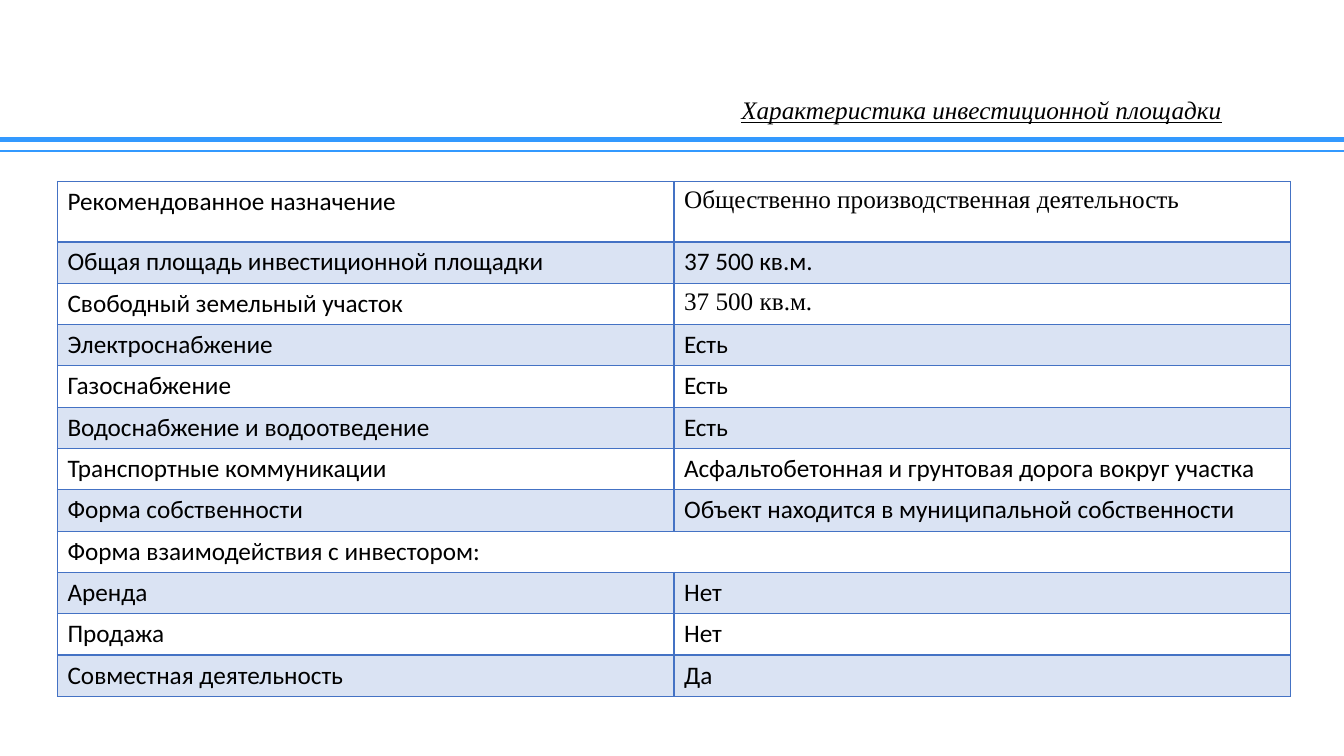
from lxml.etree import SubElement
from pptx import Presentation
from pptx.dml.color import RGBColor
from pptx.enum.shapes import MSO_CONNECTOR
from pptx.enum.text import MSO_ANCHOR, PP_ALIGN
from pptx.oxml.ns import qn
from pptx.util import Inches, Pt

COLORS = {"rule": "3399FF", "border": "4472C4", "band": "DAE3F3", "text": "000000"}
BODY_FONT = "Calibri"
SERIF_FONT = "Times New Roman"
SLIDE_WIDTH = 13.33
HEADER_HEIGHT = 0.6
ROW_HEIGHT = 0.41

# A row with one entry spans both columns
SITE_ROWS = [
    ("Рекомендованное назначение", "Общественно производственная деятельность"),
    ("Общая площадь инвестиционной площадки", "37 500 кв.м."),
    ("Свободный земельный участок", "37 500 кв.м."),
    ("Электроснабжение", "Есть"),
    ("Газоснабжение", "Есть"),
    ("Водоснабжение и водоотведение", "Есть"),
    ("Транспортные коммуникации", "Асфальтобетонная и грунтовая дорога вокруг участка"),
    ("Форма собственности", "Объект находится в муниципальной собственности"),
    ("Форма взаимодействия с инвестором:",),
    ("Аренда", "Нет"),
    ("Продажа", "Нет"),
    ("Совместная деятельность", "Да"),
]
SERIF_CELLS = {(0, 1), (2, 1)}


class SlideBuilder:
    def __init__(self, slide, colors, font_size):
        self.slide = slide
        self.colors = colors
        self.font_size = font_size

    def color(self, name):
        return RGBColor.from_string(self.colors[name])

    def add_run(self, paragraph, text, font_name, emphasis=False):
        run = paragraph.add_run()
        run.text = text
        run.font.name = font_name
        run.font.size = Pt(self.font_size)
        run.font.bold = False
        run.font.italic = run.font.underline = emphasis
        run.font.color.rgb = self.color("text")

    def add_rule(self, top, weight):
        rule = self.slide.shapes.add_connector(
            MSO_CONNECTOR.STRAIGHT, 0, Inches(top), Inches(SLIDE_WIDTH), Inches(top))
        rule.line.color.rgb = self.color("rule")
        rule.line.width = Pt(weight)
        SubElement(rule._element.spPr, qn("a:effectLst"))

    def add_title(self, text, left, top, width, height):
        shape = self.slide.shapes.add_textbox(
            Inches(left), Inches(top), Inches(width), Inches(height))
        frame = shape.text_frame
        frame.word_wrap = True
        frame.vertical_anchor = MSO_ANCHOR.MIDDLE
        frame.margin_top = frame.margin_bottom = 0
        paragraph = frame.paragraphs[0]
        paragraph.alignment = PP_ALIGN.CENTER
        paragraph.line_spacing = 0.9
        self.add_run(paragraph, text, SERIF_FONT, emphasis=True)

    def set_borders(self, cell, top=1, bottom=1):
        properties = cell._tc.get_or_add_tcPr()
        for side, weight in (("L", 1), ("R", 1), ("T", top), ("B", bottom)):
            line = SubElement(properties, qn(f"a:ln{side}"), w=str(Pt(weight)))
            fill = SubElement(line, qn("a:solidFill"))
            SubElement(fill, qn("a:srgbClr"), val=self.colors["border"])

    def add_table(self, rows, left, top, width):
        height = HEADER_HEIGHT + ROW_HEIGHT * (len(rows) - 1)
        table = self.slide.shapes.add_table(
            len(rows), 2, Inches(left), Inches(top), Inches(width), Inches(height)).table
        table.first_row = table.horz_banding = False
        for row_index, texts in enumerate(rows):
            row = table.rows[row_index]
            row.height = Inches(ROW_HEIGHT if row_index else HEADER_HEIGHT)
            for column_index, cell in enumerate(row.cells):
                self.set_borders(cell, top=2 if row_index == 1 else 1,
                                 bottom=2 if row_index == 0 else 1)
                if row_index % 2:
                    cell.fill.solid()
                    cell.fill.fore_color.rgb = self.color("band")
                else:
                    cell.fill.background()
                if column_index < len(texts):
                    serif = (row_index, column_index) in SERIF_CELLS
                    self.add_run(cell.text_frame.paragraphs[0], texts[column_index],
                                 SERIF_FONT if serif else BODY_FONT)
            if len(texts) == 1:
                table.cell(row_index, 0).merge(table.cell(row_index, 1))


def main():
    presentation = Presentation()
    presentation.slide_width = Inches(SLIDE_WIDTH)
    presentation.slide_height = Inches(7.5)
    slide = presentation.slides.add_slide(presentation.slide_layouts[6])
    builder = SlideBuilder(slide, COLORS, font_size=18)

    # Header rules and title
    builder.add_rule(top=1.38, weight=3.5)
    builder.add_rule(top=1.5, weight=1.5)
    builder.add_title("Характеристика инвестиционной площадки", 6.67, 0.97, 6.13, 0.27)

    # Site characteristics
    builder.add_table(SITE_ROWS, left=0.57, top=1.8, width=12.23)

    presentation.save("out.pptx")


if __name__ == "__main__":
    main()
